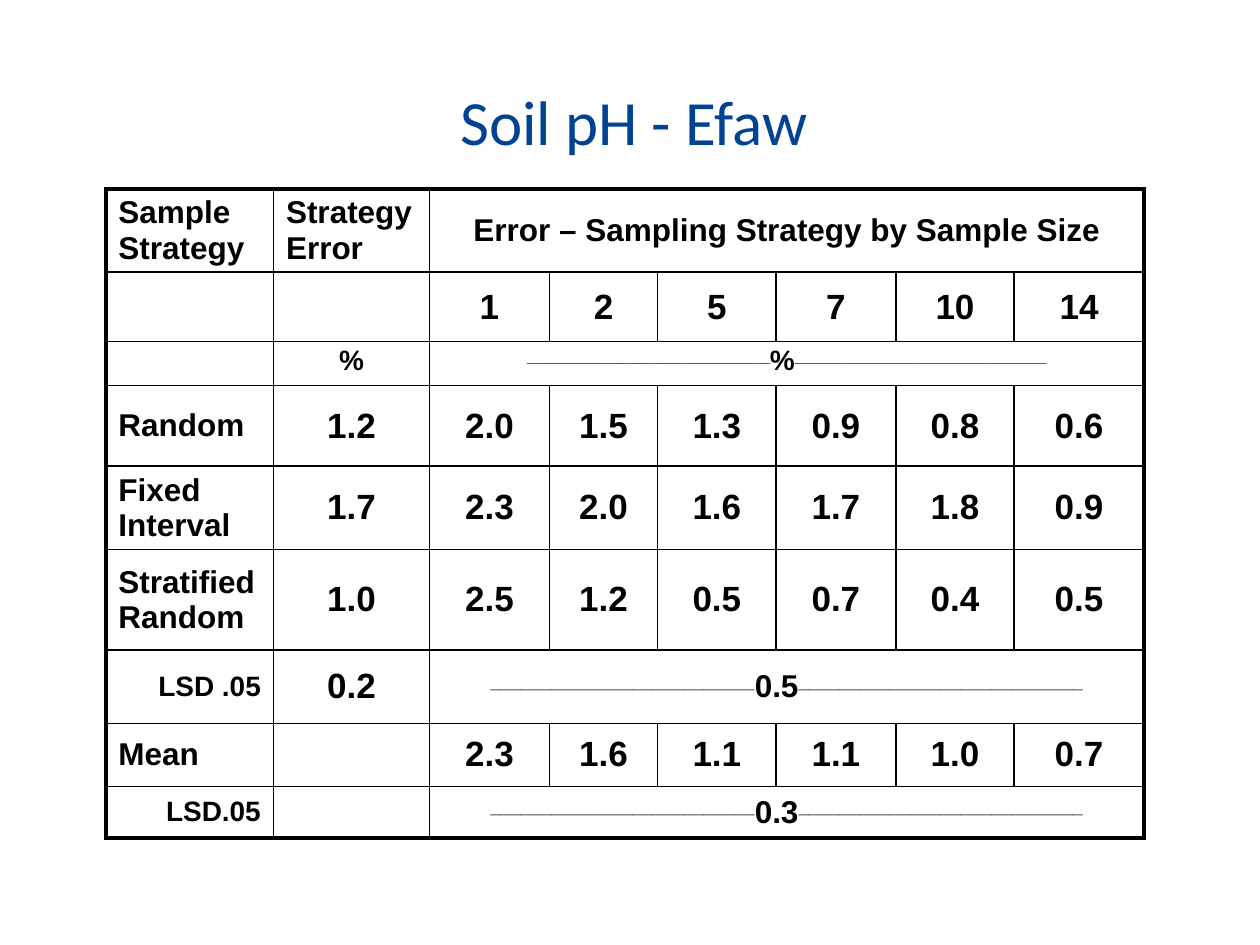
import lxml.etree
import pptx
import pptx.dml.color
import pptx.enum.text
import pptx.oxml.ns
import pptx.util

BLACK = pptx.dml.color.RGBColor(0x00, 0x00, 0x00)
BLUE = pptx.dml.color.RGBColor(0x00, 0x43, 0x95)

ALIGN = pptx.enum.text.PP_ALIGN
ANCHOR = pptx.enum.text.MSO_ANCHOR
qn = pptx.oxml.ns.qn

SLIDE_WIDTH, SLIDE_HEIGHT = 10, 7.5
THIN, THICK = 1, 2.25
COLUMN_WIDTHS = [1.33, 1.24, 0.95, 0.86, 0.94, 0.95, 0.94, 1.03]
ROW_HEIGHTS = [0.66, 0.55, 0.35, 0.64, 0.66, 0.8, 0.58, 0.5, 0.41]
FIRST_SIZE_COLUMN = 2  # sample sizes fill the columns from here on

# Each row: label, strategy error, then six values or one spanning text
ROWS = [
    ["Sample Strategy", "Strategy Error", "Error – Sampling Strategy by Sample Size"],
    ["", "", "1", "2", "5", "7", "10", "14"],
    ["", "%", "%"],
    ["Random", "1.2", "2.0", "1.5", "1.3", "0.9", "0.8", "0.6"],
    ["Fixed Interval", "1.7", "2.3", "2.0", "1.6", "1.7", "1.8", "0.9"],
    ["Stratified Random", "1.0", "2.5", "1.2", "0.5", "0.7", "0.4", "0.5"],
    ["LSD .05", "0.2", "0.5"],
    ["Mean", "", "2.3", "1.6", "1.1", "1.1", "1.0", "0.7"],
    ["LSD.05", "", "0.3"],
]
HEADER_ROW, UNIT_ROW = 0, 2
# Underscores before and after the text of a spanning cell
RULES = {2: (27, 28), 6: (26, 28), 8: (26, 28)}


def add_span(para, text, size, color, font, bold=False, raised=False):
    span = para.add_run()
    span.text = text
    span.font.size = pptx.util.Pt(size)
    span.font.name = font
    span.font.bold = bold
    span.font.color.rgb = color
    if raised:
        span.font._element.set("baseline", "30000")


def add_title(page, text):
    box = page.shapes.add_textbox(
        pptx.util.Inches(0.075 * SLIDE_WIDTH), pptx.util.Inches(0.055 * SLIDE_HEIGHT),
        pptx.util.Inches(0.85 * SLIDE_WIDTH), pptx.util.Inches(0.144 * SLIDE_HEIGHT))
    frame = box.text_frame
    frame.word_wrap = True
    frame.vertical_anchor = ANCHOR.MIDDLE
    para = frame.paragraphs[0]
    para.alignment = ALIGN.CENTER
    para._p.get_or_add_pPr().set("marL", str(pptx.util.Inches(0.06)))
    add_span(para, text, 36, BLUE, "Calibri")


def set_borders(cell, widths):
    """Draw the given sides, as a mapping of L, R, T, B to points."""
    properties = cell._tc.get_or_add_tcPr()
    for side in "LRTB":
        if side in widths:
            line = lxml.etree.SubElement(properties, qn("a:ln" + side))
            line.set("w", str(pptx.util.Pt(widths[side])))
            fill = lxml.etree.SubElement(line, qn("a:solidFill"))
            lxml.etree.SubElement(fill, qn("a:srgbClr")).set("val", str(BLACK))


def frame_cell(cell, row, column, width):
    """Thick lines round the table, thin lines within; none inside a merged cell."""
    last_row, end = len(ROWS) - 1, column + width
    widths = {"T": THICK if row == 0 else THIN,
              "B": THICK if row == last_row else THIN}
    if not cell.is_spanned:
        widths["L"] = THICK if column == 0 else THIN
    if not cell.is_spanned or end == len(COLUMN_WIDTHS):
        widths["R"] = THICK if end == len(COLUMN_WIDTHS) else THIN
    set_borders(cell, widths)
    cell.fill.background()


def place_text(cell, row, column):
    """Set the anchor and the narrow margins that keep rows at their height."""
    heading = row == HEADER_ROW and column < FIRST_SIZE_COLUMN
    at_top = heading or row == UNIT_ROW
    cell.vertical_anchor = ANCHOR.TOP if at_top else ANCHOR.MIDDLE
    cell.margin_top = pptx.util.Inches(0.05 if heading else 0.03)
    cell.margin_bottom = pptx.util.Inches(0.01 if heading else 0.03)


def text_style(row, column, text):
    """Return the size and alignment that suit the cell's role."""
    if row == UNIT_ROW:
        return 16, ALIGN.CENTER
    if text.startswith("LSD"):
        return 16, ALIGN.RIGHT
    if column == 0 or (row == HEADER_ROW and column == 1):
        return 18, ALIGN.LEFT
    if row == HEADER_ROW or row in RULES and column == FIRST_SIZE_COLUMN:
        return 18, ALIGN.CENTER
    return 20, ALIGN.CENTER


def fill_cell(cell, row, column, text):
    size, alignment = text_style(row, column, text)
    para = cell.text_frame.paragraphs[0]
    para.alignment = alignment
    if not text:
        # Keep the empty line no taller than its row
        lxml.etree.SubElement(para._p, qn("a:endParaRPr")).set("sz", "1600")
        return
    before, after = RULES.get(row, (0, 0)) if column == FIRST_SIZE_COLUMN else (0, 0)
    for piece, raised in (("_" * before, True), (text, False), ("_" * after, True)):
        if piece:
            add_span(para, piece, size, BLACK, "Arial", True, raised)


def add_error_table(page):
    table = page.shapes.add_table(
        len(ROWS), len(COLUMN_WIDTHS),
        pptx.util.Inches(0.084 * SLIDE_WIDTH), pptx.util.Inches(0.2 * SLIDE_HEIGHT),
        pptx.util.Inches(sum(COLUMN_WIDTHS)), pptx.util.Inches(sum(ROW_HEIGHTS))).table
    table.first_row = table.horz_banding = False
    for column, width in zip(table.columns, COLUMN_WIDTHS):
        column.width = pptx.util.Inches(width)
    for row, height in zip(table.rows, ROW_HEIGHTS):
        row.height = pptx.util.Inches(height)

    last_column = len(COLUMN_WIDTHS) - 1
    for row, texts in enumerate(ROWS):
        if len(texts) <= last_column:
            table.cell(row, FIRST_SIZE_COLUMN).merge(table.cell(row, last_column))
        for column in range(len(COLUMN_WIDTHS)):
            cell = table.cell(row, column)
            width = cell.span_width if cell.is_merge_origin else 1
            frame_cell(cell, row, column, width)
            place_text(cell, row, column)
            if column < len(texts):
                fill_cell(cell, row, column, texts[column])


def main():
    deck = pptx.Presentation()
    deck.slide_width = pptx.util.Inches(SLIDE_WIDTH)
    deck.slide_height = pptx.util.Inches(SLIDE_HEIGHT)
    page = deck.slides.add_slide(deck.slide_layouts[6])
    add_title(page, "Soil pH - Efaw")
    add_error_table(page)
    deck.save("out.pptx")


if __name__ == "__main__":
    main()
